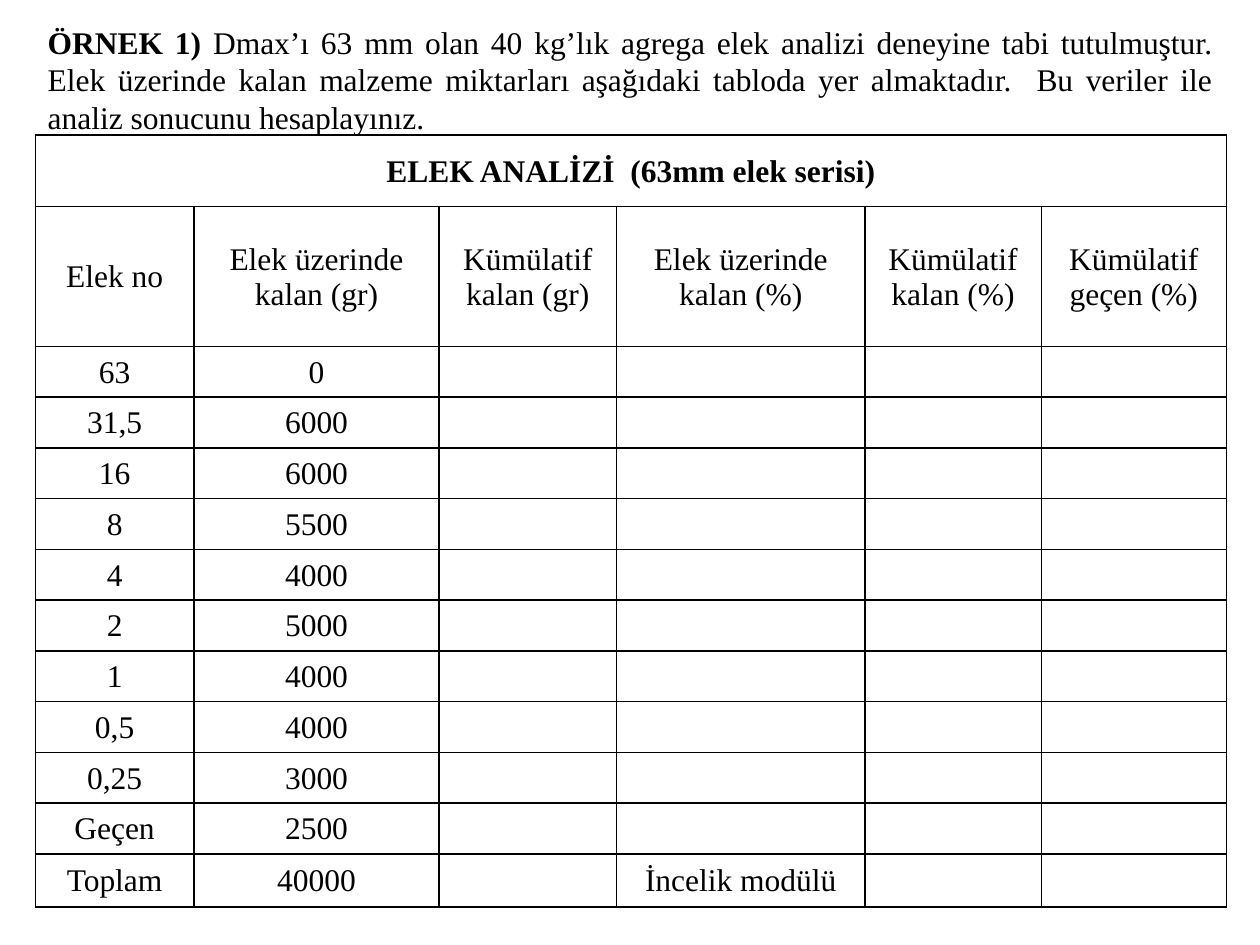
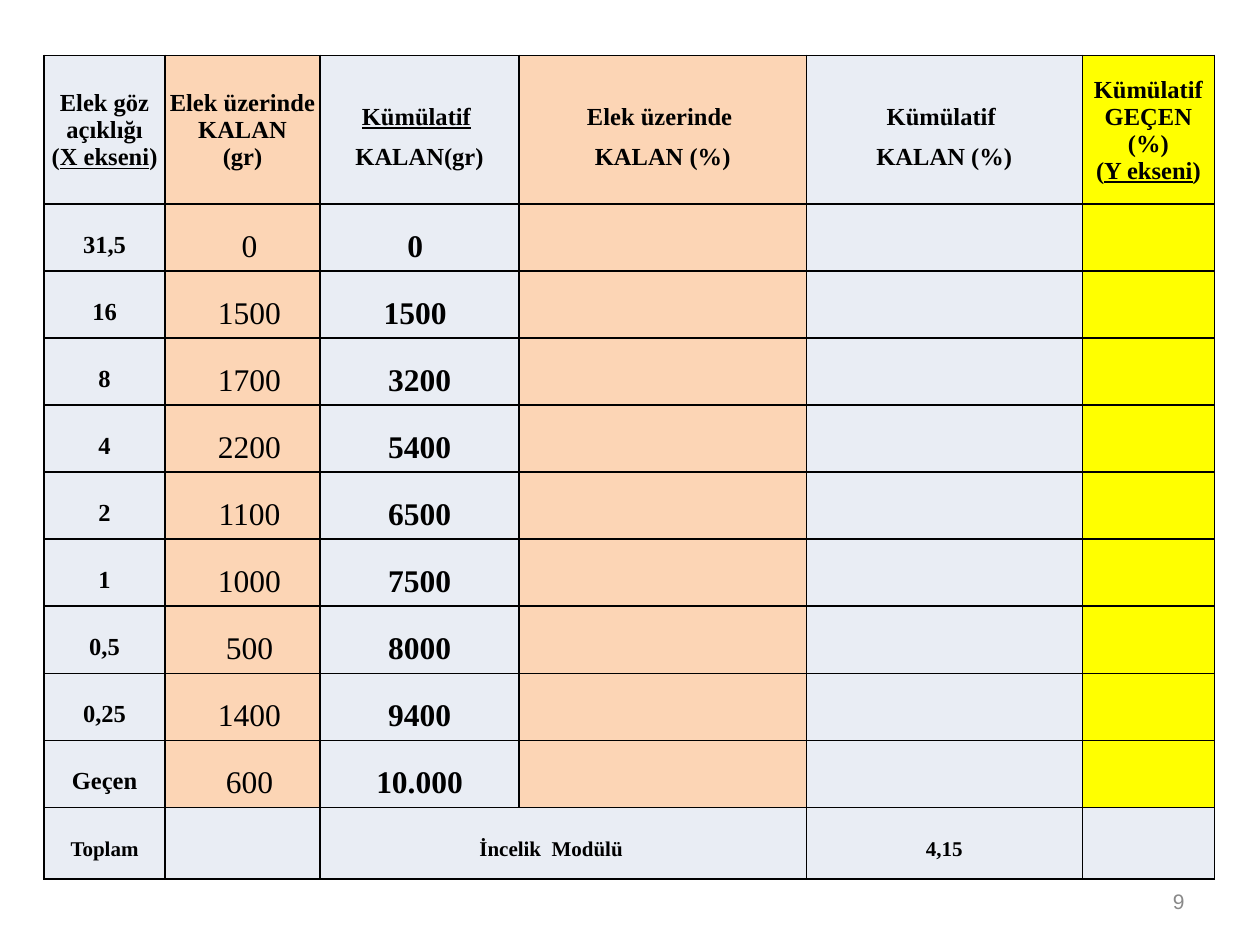
from dataclasses import dataclass, replace
from lxml import etree
from pptx import Presentation
from pptx.dml.color import RGBColor
from pptx.enum.text import MSO_ANCHOR, PP_ALIGN
from pptx.oxml.ns import qn
from pptx.util import Emu, Inches, Pt

MIDDLE, TOP = MSO_ANCHOR.MIDDLE, MSO_ANCHOR.TOP
CENTER, RIGHT, JUST = PP_ALIGN.CENTER, PP_ALIGN.RIGHT, PP_ALIGN.JUSTIFY

# Shared look; the slide is a grid of 100 columns by 75 rows
WIDE, HIGH = Inches(10), Inches(7.5)
UNIT = WIDE / 100
SERIF, SANS = "Times New Roman", "Arial"
BLACK, GREY = "000000", "898989"
PALE, PEACH, YELLOW = "E9EDF4", "FCD5B5", "FFFF00"


@dataclass(frozen=True)
class Style:
    size: int = 18
    bold: bool = False
    space: float = 1.0
    left: float = 0.1
    right: float = 0.1


@dataclass(frozen=True)
class Entry:
    text: str = ""
    style: Style = Style()
    fill: str = ""
    span: int = 1


@dataclass(frozen=True)
class Grid:
    left: float
    top: float
    cols: list[float]
    rows: list[float]
    lines: list[list[Entry]]


def units(count: float) -> Emu:
    return Emu(round(count * UNIT))


def color(code: str) -> RGBColor:
    return RGBColor.from_string(code)


def write(frame, text: str, *, size: int = 18, bold: bool = False, font: str = SERIF,
          ink: str = BLACK, align=CENTER, space: float = 1.0, mark: str = "underline") -> None:
    """Fill a text frame; pieces between underscores get the marked format."""
    for row, line in enumerate(text.split("\n")):
        para = frame.add_paragraph() if row else frame.paragraphs[0]
        para.alignment, para.line_spacing = align, space
        for turn, piece in enumerate(line.split("_")):
            if not piece:
                continue
            run = para.add_run()
            run.text = piece
            run.font.name, run.font.size, run.font.bold = font, Pt(size), bold
            run.font.color.rgb = color(ink)
            if turn % 2:
                setattr(run.font, mark, True)


def label(slide, text: str, box: tuple, anchor=TOP, **form) -> None:
    frame = slide.shapes.add_textbox(*map(units, box)).text_frame
    frame.word_wrap, frame.vertical_anchor = True, anchor
    write(frame, text, **form)


def border(cell) -> None:
    props = cell._tc.get_or_add_tcPr()
    for side in ("lnL", "lnR", "lnT", "lnB"):
        line = etree.SubElement(props, qn(f"a:{side}"), w=str(Pt(1)))
        paint = etree.SubElement(line, qn("a:solidFill"))
        etree.SubElement(paint, qn("a:srgbClr"), val=BLACK)


def fill_cell(cell, entry: Entry) -> None:
    style = entry.style
    border(cell)
    if entry.fill:
        cell.fill.solid()
        cell.fill.fore_color.rgb = color(entry.fill)
    else:
        cell.fill.background()
    cell.vertical_anchor = MIDDLE
    cell.margin_left, cell.margin_right = units(style.left), units(style.right)
    cell.margin_top, cell.margin_bottom = units(0.1), 0
    if entry.text:
        write(cell.text_frame, entry.text, size=style.size, bold=style.bold, space=style.space)


def draw(slide, grid: Grid) -> None:
    box = map(units, (grid.left, grid.top, sum(grid.cols), sum(grid.rows)))
    table = slide.shapes.add_table(len(grid.rows), len(grid.cols), *box).table
    table.first_row = table.horz_banding = False
    for col, size in zip(table.columns, grid.cols):
        col.width = units(size)
    for row, size in zip(table.rows, grid.rows):
        row.height = units(size)
    for row, line in enumerate(grid.lines):
        col = 0
        for entry in line:
            last = col + entry.span - 1
            fill_cell(table.cell(row, col), entry)
            for rest in range(col + 1, last + 1):
                fill_cell(table.cell(row, rest), Entry(fill=entry.fill))
            if entry.span > 1:
                table.cell(row, col).merge(table.cell(row, last))
            col = last + 1


# Slide 1: the exercise
TASK = ("_ÖRNEK 1) _Dmax’ı 63 mm olan 40 kg’lık agrega elek analizi deneyine tabi tutulmuştur. "
        "Elek üzerinde kalan malzeme miktarları aşağıdaki tabloda yer almaktadır.  "
        "Bu veriler ile analiz sonucunu hesaplayınız.")
HEADS = ["Elek no", "Elek üzerinde kalan (gr)", "Kümülatif kalan (gr)",
         "Elek üzerinde kalan (%)", "Kümülatif kalan (%)", "Kümülatif geçen (%)"]
GIVEN = [("63", "0"), ("31,5", "6000"), ("16", "6000"), ("8", "5500"), ("4", "4000"),
         ("2", "5000"), ("1", "4000"), ("0,5", "4000"), ("0,25", "3000"), ("Geçen", "2500")]


def task_grid() -> Grid:
    title = Entry("ELEK ANALİZİ  (63mm elek serisi)", Style(bold=True), span=6)
    body = [[*pair, "", "", "", ""] for pair in GIVEN]
    total = ["Toplam", "40000", "", "İncelik modülü", "", ""]
    lines = [[Entry(text) for text in row] for row in (HEADS, *body, total)]
    return Grid(2.8, 10.7, [12.6, 19.45, 14.1, 19.7, 14, 14.7],
                [5.7, 11.1, *[4.03] * len(GIVEN), 4.2], [[title], *lines])


# Slide 2: the worked table
TINTS = [PALE, PEACH, PALE, PEACH, PALE, YELLOW]
TIGHT = Style(14, True)
LOOSE = replace(TIGHT, space=1.5)
TOPS = [("Elek göz açıklığı\n(_X ekseni_)", TIGHT),
        ("Elek üzerinde KALAN\n(gr)", TIGHT),
        ("_Kümülatif_ \nKALAN(gr)", LOOSE),
        ("Elek üzerinde \nKALAN (%)", LOOSE),
        ("Kümülatif \nKALAN (%)", LOOSE),
        ("Kümülatif GEÇEN (%)\n(_Y ekseni_)", TIGHT)]
KEPT = [("31,5", "0", "0"), ("16", "1500", "1500"), ("8", "1700", "3200"),
        ("4", "2200", "5400"), ("2", "1100", "6500"), ("1", "1000", "7500"),
        ("0,5", "500", "8000"), ("0,25", "1400", "9400"), ("Geçen", "600", "10.000")]
MASS = Style(space=1.5, left=1.2)
EARLY = Style(bold=True, space=1.5, right=0.8)
LATER = replace(EARLY, left=0.5, right=0.5)
FOOT = Style(12, True, 1.5)


def sum_grid() -> Grid:
    lines = [[Entry(text, style, tint) for (text, style), tint in zip(TOPS, TINTS)]]
    for row, texts in enumerate(KEPT):
        looks = (LOOSE, MASS, EARLY if row < 2 else LATER)
        full = [Entry(*item) for item in zip(texts, looks, TINTS)]
        lines.append(full + [Entry(fill=tint) for tint in TINTS[3:]])
    lines.append([Entry("Toplam", FOOT, PALE), Entry(fill=PALE),
                  Entry("İncelik  Modülü", replace(FOOT, right=2), PALE, 2),
                  Entry("4,15", FOOT, PALE), Entry(fill=PALE)])
    return Grid(3.5, 4.4, [9.6, 12.3, 15.8, 22.8, 21.9, 10.5],
                [11.8, *[5.32] * len(KEPT), 5.7], lines)


def main() -> None:
    deck = Presentation()
    deck.slide_width, deck.slide_height = WIDE, HIGH
    blank = deck.slide_layouts[6]

    first = deck.slides.add_slide(blank)
    draw(first, task_grid())
    label(first, TASK, (2.8, 1.3, 94.5, 10.1), align=JUST, mark="bold")

    second = deck.slides.add_slide(blank)
    draw(second, sum_grid())
    label(second, "9", (71.7, 69.5, 23.3, 4), MIDDLE,
          size=12, font=SANS, ink=GREY, align=RIGHT)

    deck.save("out.pptx")


if __name__ == "__main__":
    main()
